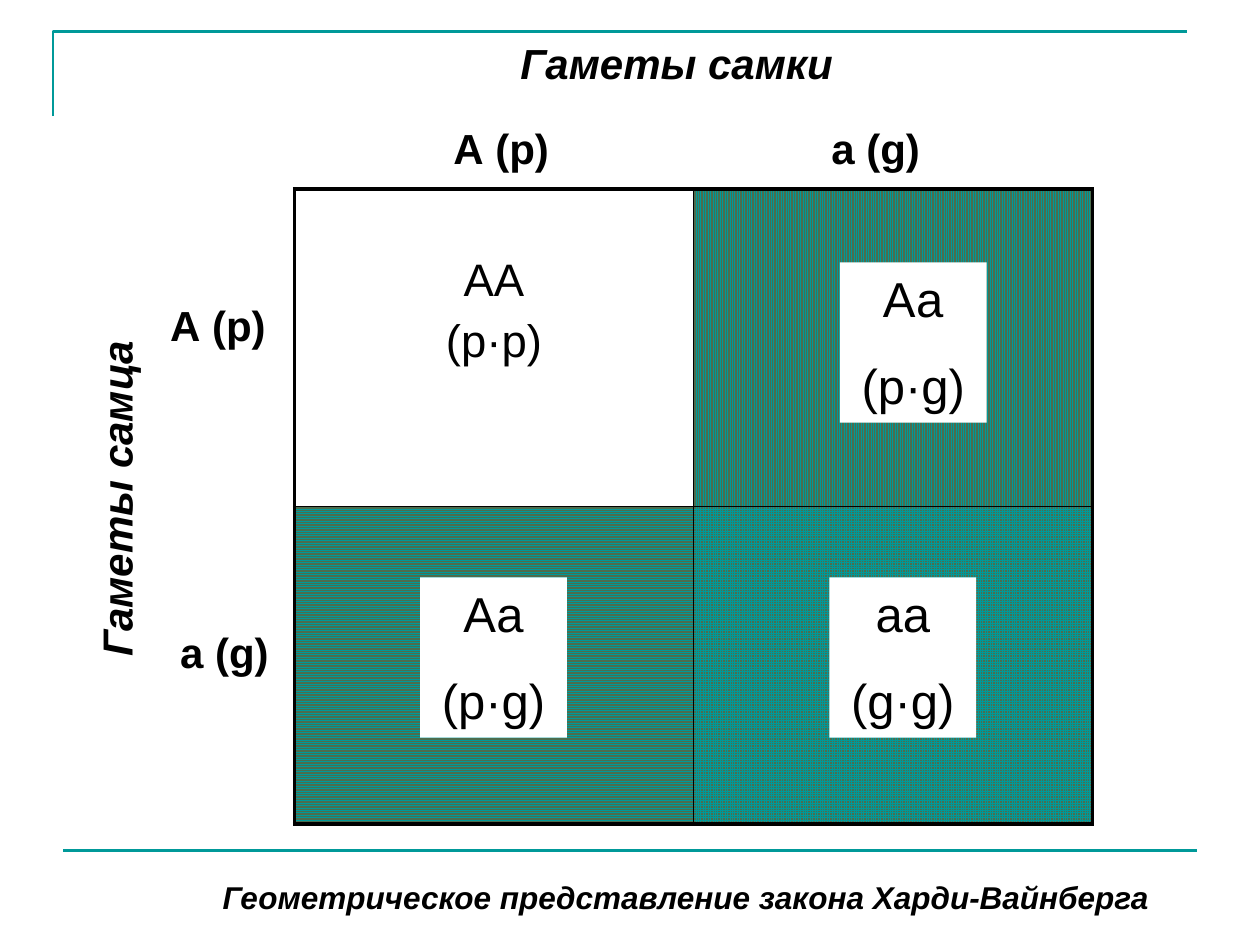
from lxml.etree import SubElement
from pptx import Presentation
from pptx.dml.color import RGBColor
from pptx.enum.dml import MSO_PATTERN
from pptx.enum.shapes import MSO_CONNECTOR, MSO_SHAPE
from pptx.enum.text import MSO_ANCHOR, PP_ALIGN
from pptx.oxml import parse_xml
from pptx.oxml.ns import nsdecls, qn
from pptx.util import Cm, Pt

TEAL = RGBColor(0x00, 0x99, 0x99)
GREEN = RGBColor(0x4C, 0x6D, 0x4E)
BLACK = RGBColor(0, 0, 0)
WHITE = RGBColor(255, 255, 255)


def write(frame, text, size=24, bold=False, italic=False,
          align=PP_ALIGN.CENTER, gap=0, wrap=True):
    """Fill a text frame, one paragraph a line, with gap points between lines."""
    frame.word_wrap = wrap
    for i, line in enumerate(text.split("\n")):
        para = frame.paragraphs[0] if i == 0 else frame.add_paragraph()
        para.alignment = align
        para.space_before = Pt(gap if i else 0)
        run = para.add_run()
        run.text = line
        font = run.font
        font.name, font.size = "Arial", Pt(size)
        font.bold, font.italic = bold, italic
        font.color.rgb = BLACK


deck = Presentation()
deck.slide_width, deck.slide_height = Cm(25.4), Cm(19.05)
slide = deck.slides.add_slide(deck.slide_layouts[6])
shapes = slide.shapes

# Frame lines
pen = shapes.build_freeform(Cm(1.07), Cm(2.34))
pen.add_line_segments([(Cm(1.07), Cm(0.64)), (Cm(23.93), Cm(0.64))], close=False)
corner = pen.convert_to_shape()
corner.shadow.inherit = False
corner.fill.background()
rule = shapes.add_connector(MSO_CONNECTOR.STRAIGHT, Cm(1.27), Cm(17.15), Cm(24.13), Cm(17.15))
SubElement(rule._element.spPr, qn("a:effectLst"))
for item in (corner, rule):
    item.line.color.rgb = TEAL
    item.line.width = Pt(1.5)

# Caption
box = shapes.add_textbox(Cm(4.24), Cm(17.58), Cm(19.38), Cm(1.02))
box.text_frame.vertical_anchor = MSO_ANCHOR.MIDDLE
write(box.text_frame, "Геометрическое представление закона Харди-Вайнберга",
      size=18, bold=True, italic=True, align=PP_ALIGN.LEFT, wrap=False)

# Punnett square
grid = shapes.add_table(2, 2, Cm(5.94), Cm(3.81), Cm(16.08), Cm(12.8)).table
grid.first_row = grid.horz_banding = False
for k in range(2):
    grid.columns[k].width = Cm(8.04)
    grid.rows[k].height = Cm(6.4)

hatch = {
    (0, 1): MSO_PATTERN.LIGHT_VERTICAL,
    (1, 0): MSO_PATTERN.LIGHT_HORIZONTAL,
    (1, 1): MSO_PATTERN.SMALL_GRID,
}
for row in range(2):
    for col in range(2):
        cell = grid.cell(row, col)
        if (row, col) in hatch:
            cell.fill.patterned()
            cell.fill.pattern = hatch[row, col]
            cell.fill.fore_color.rgb = TEAL
            cell.fill.back_color.rgb = GREEN
        else:
            cell.fill.background()
        outer = {"L": col == 0, "R": col == 1, "T": row == 0, "B": row == 1}
        props = cell._tc.get_or_add_tcPr()
        for k, (side, edge) in enumerate(outer.items()):
            width = Pt(2.25 if edge else 1)
            props.insert(k, parse_xml(
                f'<a:ln{side} {nsdecls("a")} w="{width}"><a:solidFill>'
                f'<a:srgbClr val="{BLACK}"/></a:solidFill></a:ln{side}>'))

first = grid.cell(0, 0)
first.margin_top = Cm(1.33)
write(first.text_frame, "АА\n(р·р)", size=26, gap=6)

# Axis titles
for text, left, top, turn in (("Гаметы самки", 7.19, 0.64, 0),
                              ("Гаметы самца", -4.11, 9.42, 270)):
    box = shapes.add_textbox(Cm(left), Cm(top), Cm(12.9), Cm(1.27))
    box.rotation = turn
    write(box.text_frame, text, bold=True, italic=True)

# Gamete labels
for text, left, top in (("А (р)", 8.89, 2.34), ("а (g)", 16.51, 2.34),
                        ("А (р)", 3.18, 5.92), ("а (g)", 3.38, 12.5)):
    box = shapes.add_textbox(Cm(left), Cm(top), Cm(2.74), Cm(1.27))
    write(box.text_frame, text, bold=True, align=PP_ALIGN.LEFT)

# Genotype cards
for text, left, top in (("Аа\n(р·g)", 16.93, 5.29), ("Аа\n(р·g)", 8.47, 11.64),
                        ("аа\n(g·g)", 16.72, 11.64)):
    card = shapes.add_shape(MSO_SHAPE.RECTANGLE, Cm(left), Cm(top), Cm(2.96), Cm(3.23))
    card.shadow.inherit = False
    card.fill.solid()
    card.fill.fore_color.rgb = WHITE
    card.line.fill.background()
    card.text_frame.vertical_anchor = MSO_ANCHOR.TOP
    write(card.text_frame, text, size=28, gap=16)

deck.save("out.pptx")
